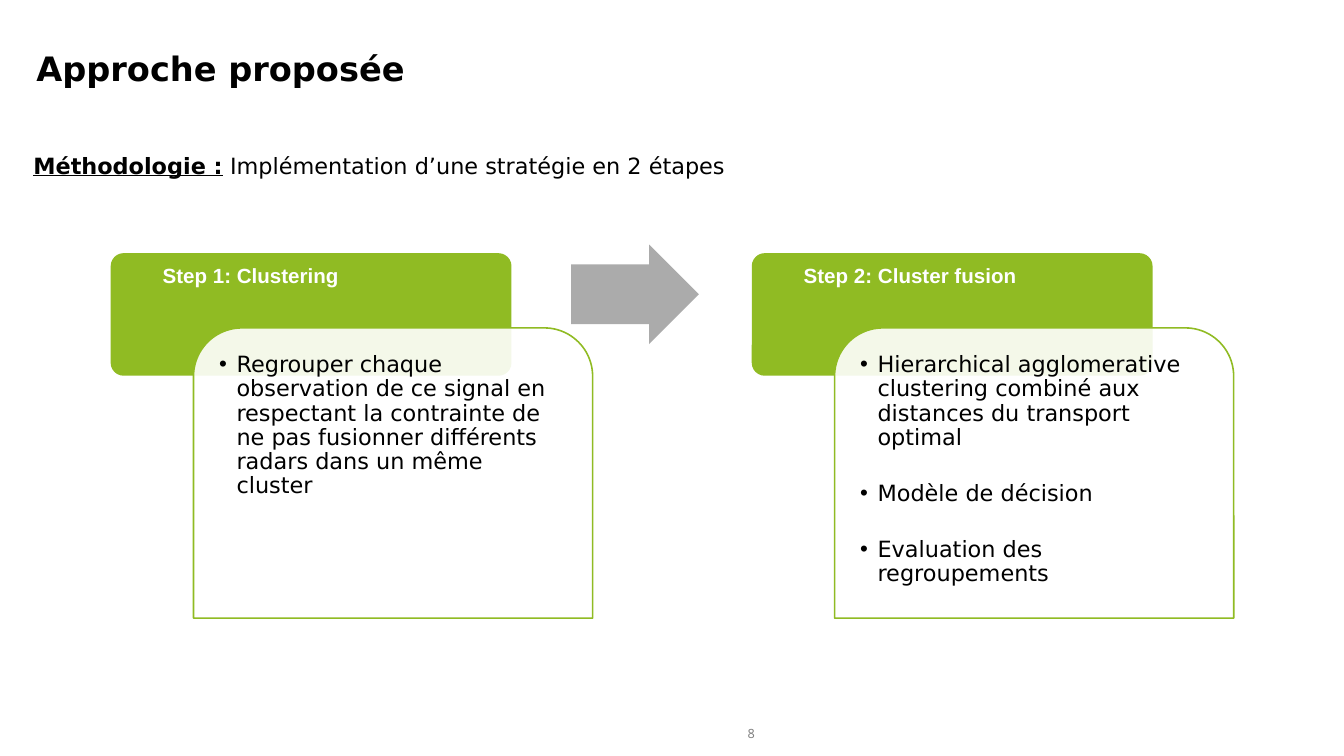
from lxml import etree
from pptx import Presentation, util as u
from pptx.dml.color import RGBColor
from pptx.enum import shapes, text
from pptx.oxml.ns import qn

# Content
TITLE = "Approche proposée"
LEAD = ("Méthodologie :", " Implémentation d’une stratégie en 2 étapes")
STEPS = [
    ("Step 1: Clustering",
     ["Regrouper chaque observation de ce signal en respectant la contrainte "
      "de ne pas fusionner différents radars dans un même cluster"]),
    ("Step 2: Cluster fusion",
     ["Hierarchical agglomerative clustering combiné aux distances du "
      "transport optimal",
      "Modèle de décision",
      "Evaluation des regroupements"]),
]
PAGE = "8"

# Look and grid, in inches
GREEN, GREY, WHITE, BLACK = "90BB23", "ABABAB", "FFFFFF", "000000"
SANS = "DejaVu Sans"
WIDE = 10
LEFT, TOP, PITCH = 0.83, 1.89, 4.77
CARD_W, HEAD_H, BODY_H = 2.97, 0.9, 2.16
SHIFT_X, SHIFT_Y = 0.61, 0.55
KIND = shapes.MSO_SHAPE


def rgb(code):
    return RGBColor.from_string(code)


def style(font, size, color=BLACK, name=SANS, bold=False):
    font.size, font.name, font.bold = u.Pt(size), name, bold
    font.color.rgb = rgb(color)


def setup(frame, pad):
    frame.word_wrap = True
    frame.auto_size = text.MSO_AUTO_SIZE.NONE
    frame.vertical_anchor = text.MSO_ANCHOR.TOP
    sides = ("left", "top", "right", "bottom")
    for side, gap in zip(sides, pad):
        setattr(frame, "margin_" + side, u.Inches(gap))
    return frame


def box(*area, pad=(0.1, 0.05, 0.1, 0.05)):
    item = slide.shapes.add_textbox(*map(u.Inches, area))
    return setup(item.text_frame, pad)


def block(kind, area, fill, line=None, adj=()):
    item = slide.shapes.add_shape(kind, *map(u.Inches, area))
    item.shadow.inherit = False
    item.fill.solid()
    item.fill.fore_color.rgb = rgb(fill)
    if line:
        item.line.color.rgb = rgb(line)
        item.line.width = u.Pt(0.85)
    else:
        item.line.fill.background()
    for i, value in enumerate(adj):
        item.adjustments[i] = value
    return item


def fade(item, share):
    color = item.fill._xPr.find(".//" + qn("a:srgbClr"))
    etree.SubElement(color, qn("a:alpha"), val=str(share * 1000))


def bullet(para):
    props = para._p.get_or_add_pPr()
    indent = u.Inches(0.13)
    props.set("marL", str(indent))
    props.set("indent", str(-indent))
    etree.SubElement(props, qn("a:buFont"), typeface="Arial")
    etree.SubElement(props, qn("a:buChar"), char="•")


def card(x, head, points):
    # Green header with its label
    block(KIND.ROUNDED_RECTANGLE, (x, TOP, CARD_W, HEAD_H), GREEN, GREEN, [0.1])
    para = box(x + 0.29, TOP, 2.37, 0.6,
               pad=(0.09, 0.09, 0.09, 0.05)).paragraphs[0]
    para.text, para.line_spacing = head, 0.9
    style(para.font, 11, WHITE, "Arial", True)

    # Overlapping panel with its bullets
    left, top = x + SHIFT_X, TOP + SHIFT_Y
    panel = block(KIND.ROUND_2_SAME_RECTANGLE, (left, top, CARD_W, BODY_H),
                  WHITE, GREEN)
    fade(panel, 90)
    frame = box(left + 0.1, top + 0.1, 2.74, 2.06, pad=[0.09] * 4)
    for i, point in enumerate(points):
        para = frame.add_paragraph() if i else frame.paragraphs[0]
        para.text, para.line_spacing = point, 0.9
        if i:
            para.space_before = u.Pt(17)
        bullet(para)
        style(para.font, 12)


deck = Presentation()
deck.slide_width, deck.slide_height = u.Inches(WIDE), u.Inches(WIDE * 9 / 16)
slide = deck.slides.add_slide(deck.slide_layouts[5])

# Title
title = slide.shapes.title
title.left, title.top, title.width, title.height = map(
    u.Inches, (0.17, 0.31, 9.55, 0.62))
para = setup(title.text_frame, (0.1, 0.05, 0.1, 0.05)).paragraphs[0]
para.text, para.alignment = TITLE, text.PP_ALIGN.LEFT
style(para.font, 18, bold=True)

# Lead line
para = box(0.15, 1.08, 9.56, 0.39).paragraphs[0]
for i, part in enumerate(LEAD):
    run = para.add_run()
    run.text = part
    style(run.font, 12, bold=i == 0)
    run.font.underline = i == 0

# Steps and the arrow between them
for i, (head, points) in enumerate(STEPS):
    card(LEFT + i * PITCH, head, points)
block(KIND.RIGHT_ARROW, (4.25, 1.82, 0.95, 0.74), GREY, adj=[0.6, 0.5])

# Page number
frame = box(5.25, 5.36, 0.68, 0.2, pad=(0.08, 0.04, 0.08, 0.04))
frame.vertical_anchor = text.MSO_ANCHOR.MIDDLE
para = frame.paragraphs[0]
para.text, para.alignment = PAGE, text.PP_ALIGN.CENTER
style(para.font, 6.8, "818181", "Noto Sans")

deck.save("out.pptx")
